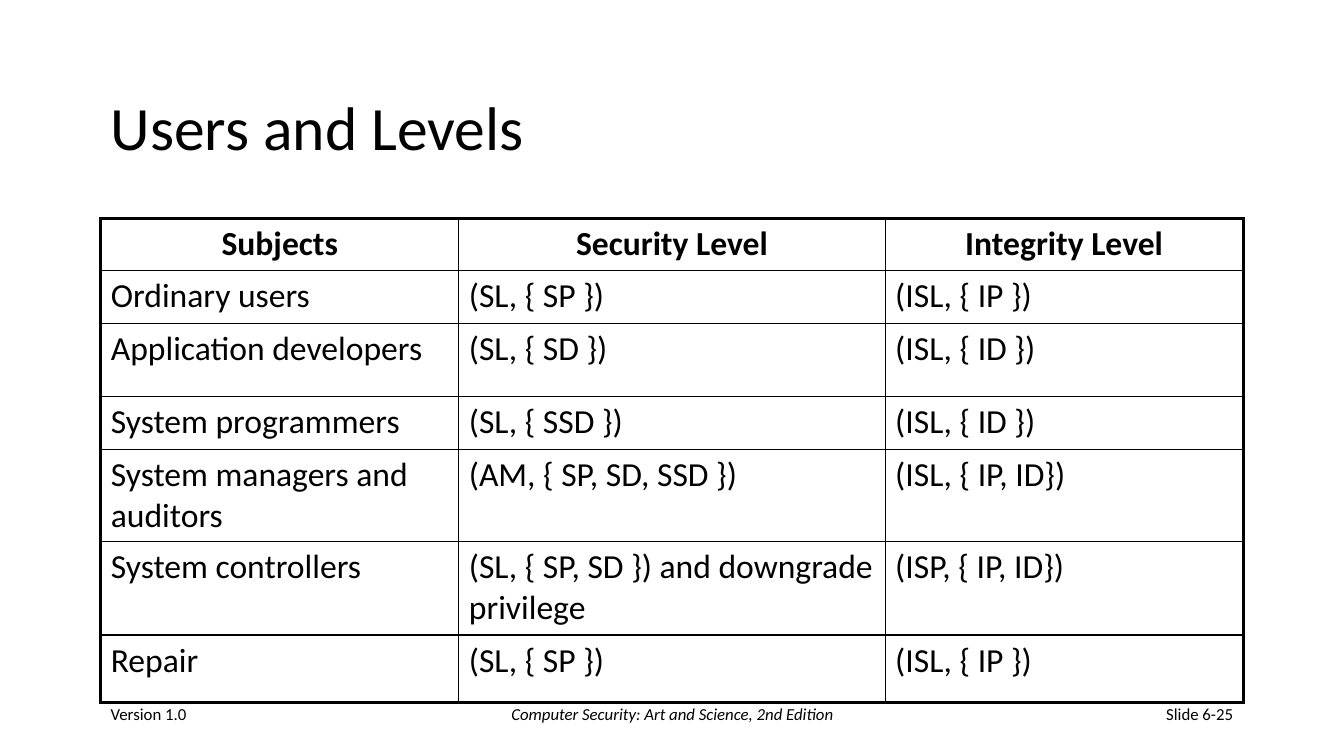
from lxml.etree import SubElement
from pptx import Presentation
from pptx.dml.color import RGBColor
from pptx.enum.text import MSO_ANCHOR as Anchor, PP_ALIGN as Align
from pptx.oxml.ns import qn
from pptx.util import Emu, Pt

EMU_PER_PX = 9525
BLACK = "000000"


def px(length):
    return Emu(length * EMU_PER_PX)


def color(hex_value):
    return RGBColor.from_string(hex_value)


class Deck:
    font = "Calibri"
    thin, thick = Pt(1), Pt(2.25)

    def __init__(self, width, height):
        self.prs = Presentation()
        self.prs.slide_width, self.prs.slide_height = px(width), px(height)
        self.slide = self.prs.slides.add_slide(self.prs.slide_layouts[6])

    def add_words(self, frame, words, size, align=Align.LEFT, bold=False, italic=False):
        paragraph = frame.paragraphs[0]
        paragraph.alignment = align
        run = paragraph.add_run()
        run.text = words
        run.font.name, run.font.size = self.font, Pt(size)
        run.font.bold, run.font.italic = bold, italic
        run.font.color.rgb = color(BLACK)
        return paragraph

    def text(self, x, y, w, h, words, size, **style):
        frame = self.slide.shapes.add_textbox(px(x), px(y), px(w), px(h)).text_frame
        frame.word_wrap = True
        frame.vertical_anchor = Anchor.MIDDLE
        return self.add_words(frame, words, size, **style)

    def border(self, cell, side, width):
        props = cell._tc.get_or_add_tcPr()
        line = SubElement(props, qn(f"a:ln{side}"), w=str(width))
        fill = SubElement(line, qn("a:solidFill"))
        SubElement(fill, qn("a:srgbClr"), val=BLACK)

    def table(self, x, y, widths, heights, rows, size):
        grid = self.slide.shapes.add_table(
            len(rows), len(widths), px(x), px(y), px(sum(widths)), px(sum(heights))).table
        grid.first_row = grid.horz_banding = False
        for column, width in zip(grid.columns, widths):
            column.width = px(width)
        last_row, last_col = len(rows) - 1, len(widths) - 1
        for r, (row, height) in enumerate(zip(rows, heights)):
            grid.rows[r].height = px(height)
            for c, words in enumerate(row):
                cell = grid.cell(r, c)
                header = r == 0
                self.add_words(cell.text_frame, words, size, bold=header,
                               align=Align.CENTER if header else Align.LEFT)
                # Thick frame outside, thin rules inside
                outer = {"L": c == 0, "R": c == last_col, "T": r == 0, "B": r == last_row}
                for side, is_outer in outer.items():
                    self.border(cell, side, self.thick if is_outer else self.thin)
                cell.fill.background()


def main():
    deck = Deck(1280, 720)

    # Title
    title = deck.text(96, 64, 1088, 120, "Users and Levels", 44)
    title.line_spacing = 0.9

    # Levels held by each kind of subject
    levels = [
        ("Subjects", "Security Level", "Integrity Level"),
        ("Ordinary users", "(SL, { SP })", "(ISL, { IP })"),
        ("Application developers", "(SL, { SD })", "(ISL, { ID })"),
        ("System programmers", "(SL, { SSD })", "(ISL, { ID })"),
        ("System managers and auditors", "(AM, { SP, SD, SSD })", "(ISL, { IP, ID})"),
        ("System controllers", "(SL, { SP, SD }) and downgrade privilege", "(ISP, { IP, ID})"),
        ("Repair", "(SL, { SP })", "(ISL, { IP })"),
    ]
    deck.table(96, 208, (341, 406, 341), (50, 50, 70, 50, 88, 89, 64), levels, 24)

    # Footer
    footer = [
        (96, 267, "Version 1.0", Align.LEFT, False),
        (438, 405, "Computer Security: Art and Science, 2nd Edition", Align.CENTER, True),
        (917, 267, "Slide 6-25", Align.RIGHT, False),
    ]
    for x, width, words, align, italic in footer:
        deck.text(x, 656, width, 48, words, 12, align=align, italic=italic)

    deck.prs.save("out.pptx")


if __name__ == "__main__":
    main()
